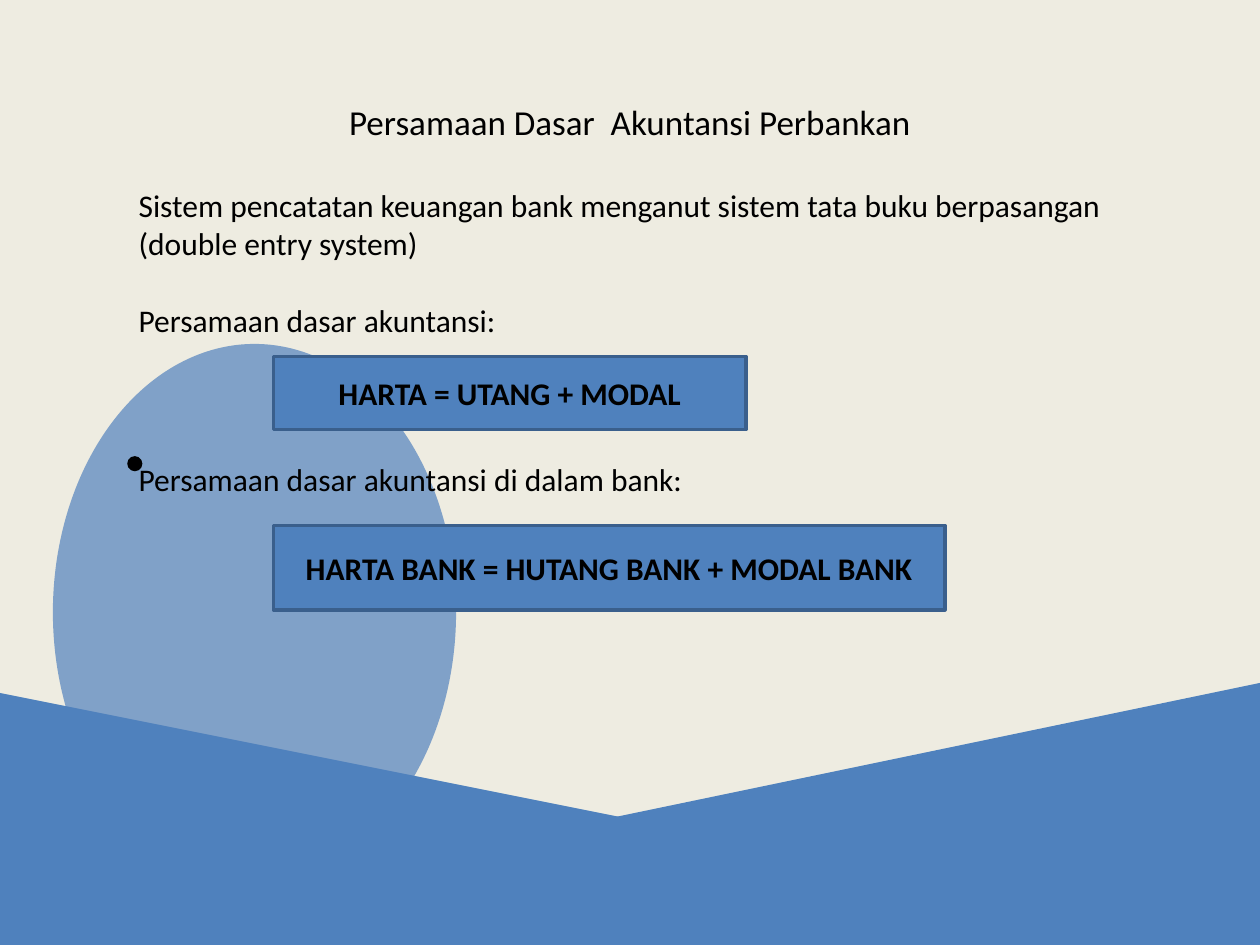
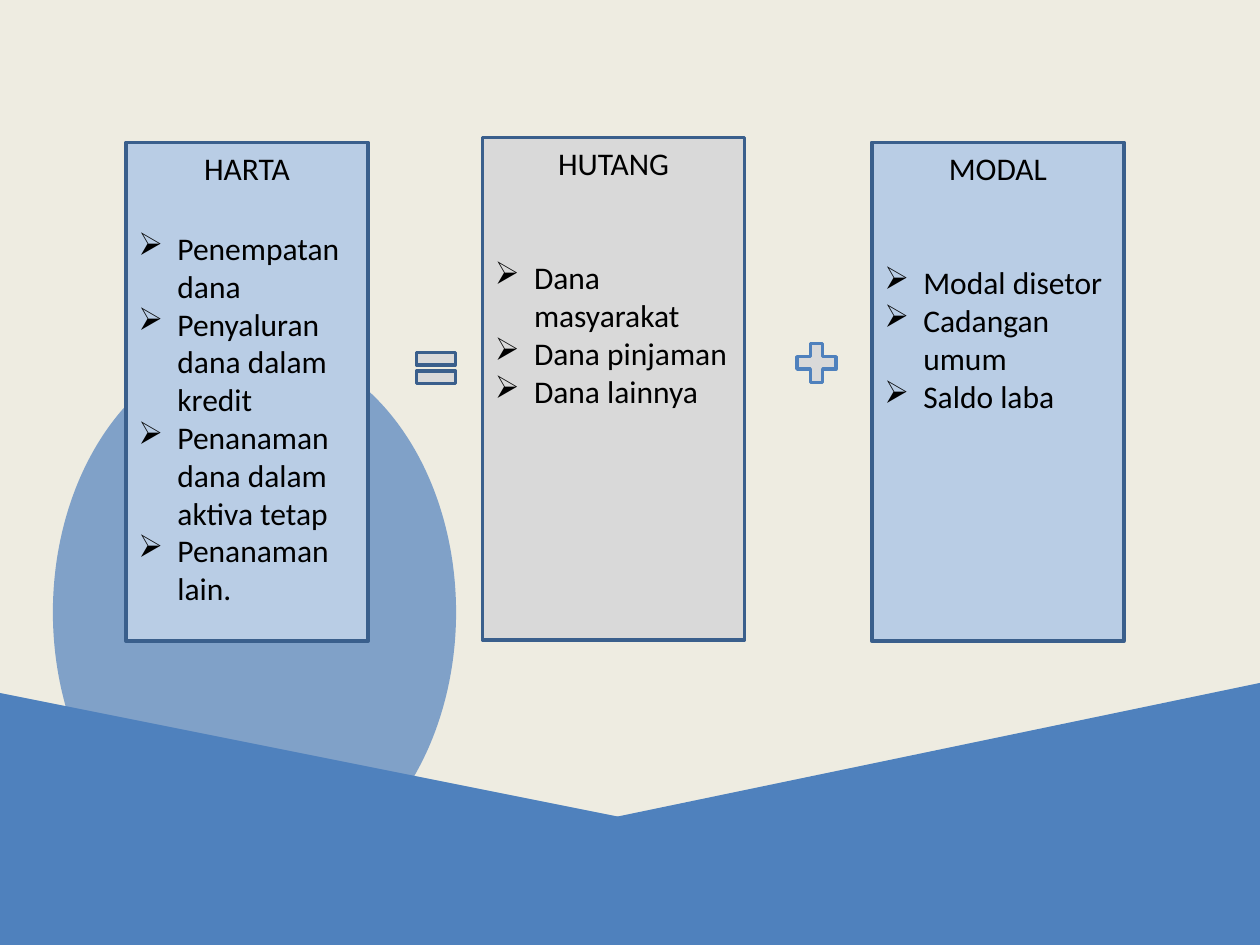
from lxml.etree import SubElement
from pptx import Presentation
from pptx.dml.color import RGBColor
from pptx.enum.shapes import MSO_SHAPE
from pptx.enum.text import MSO_ANCHOR, MSO_AUTO_SIZE, PP_ALIGN
from pptx.oxml.ns import qn
from pptx.util import Inches, Pt

FONT = "Calibri"
BLUE, DARK_BLUE, PALE_BLUE = "4F81BD", "3A5F8C", "B9CDE5"
CIRCLE_BLUE, GREY, CREAM, BLACK = "80A1C8", "D9D9D9", "EEECE1", "000000"
TITLE_BOX = (1, 0.75, 8, 0.44)
BODY_BOX = (1, 1.43, 8, 3.19)


def rgb(color):
    return RGBColor.from_string(color)


def add_text(tf, text, size=18, bold=False, align=PP_ALIGN.LEFT,
             before=0, after=0, bullet=None, hang=0):
    """Write one paragraph, taking the first one while it is still empty."""
    p = tf.paragraphs[0]
    if p.runs:
        p = tf.add_paragraph()
    p.alignment = align
    p.line_spacing = 1.0
    p.space_before, p.space_after = Pt(before), Pt(after)
    pPr = p._p.get_or_add_pPr()
    pPr.set("marL", str(Inches(hang)))
    pPr.set("indent", str(-Inches(hang)))
    if bullet:
        SubElement(pPr, qn("a:buChar")).set("char", bullet)
    else:
        SubElement(pPr, qn("a:buNone"))
    r = p.add_run()
    r.text = text
    r.font.name, r.font.size, r.font.bold = FONT, Pt(size), bold
    r.font.color.rgb = rgb(BLACK)


def add_shape(slide, kind, box, fill, line=None):
    sp = slide.shapes.add_shape(kind, *map(Inches, box))
    sp.shadow.inherit = False
    sp.fill.solid()
    sp.fill.fore_color.rgb = rgb(fill)
    if line:
        sp.line.color.rgb = rgb(line)
        sp.line.width = Pt(2)
    else:
        sp.line.fill.background()
    return sp


def add_backdrop(slide):
    """Draw the circle and the two wedges behind everything else."""
    circle = add_shape(slide, MSO_SHAPE.OVAL, (0.42, 2.73, 3.2, 4.26), CIRCLE_BLUE)
    left = add_shape(slide, MSO_SHAPE.RIGHT_TRIANGLE, (0, 5.5, 10, 2), BLUE)
    right = add_shape(slide, MSO_SHAPE.RIGHT_TRIANGLE, (0, 5.42, 10, 2.08), BLUE)
    right.element.spPr.find(qn("a:xfrm")).set("flipH", "1")
    for i, sp in enumerate((circle, left, right)):
        sp.element.getparent().insert(2 + i, sp.element)


def place(sp, box, anchor=MSO_ANCHOR.TOP):
    """Move a placeholder to a box and return its text frame."""
    sp.left, sp.top, sp.width, sp.height = map(Inches, box)
    tf = sp.text_frame
    tf.word_wrap = True
    tf.auto_size = MSO_AUTO_SIZE.NONE
    tf.vertical_anchor = anchor
    return tf


def add_equation(slide, box, text):
    sp = add_shape(slide, MSO_SHAPE.RECTANGLE, box, BLUE, DARK_BLUE)
    sp.text_frame.vertical_anchor = MSO_ANCHOR.MIDDLE
    add_text(sp.text_frame, text, bold=True, align=PP_ALIGN.CENTER)


def add_column(slide, box, fill, heading, items, gap=44):
    sp = add_shape(slide, MSO_SHAPE.RECTANGLE, box, fill, DARK_BLUE)
    tf = sp.text_frame
    tf.word_wrap = True
    tf.vertical_anchor = MSO_ANCHOR.TOP
    add_text(tf, heading, align=PP_ALIGN.CENTER, after=gap)
    for item in items:
        add_text(tf, item, bullet="➢", hang=0.31)


def build_equation_slide(prs):
    slide = prs.slides.add_slide(prs.slide_layouts[1])
    add_backdrop(slide)
    title = place(slide.shapes.title, TITLE_BOX)
    add_text(title, "Persamaan Dasar  Akuntansi Perbankan", size=20,
             align=PP_ALIGN.CENTER)
    body = place(slide.placeholders[1], BODY_BOX)
    add_text(body, "Sistem pencatatan keuangan bank menganut sistem tata buku "
                   "berpasangan (double entry system)")
    add_text(body, "Persamaan dasar akuntansi:", before=22)
    add_text(body, "Persamaan dasar akuntansi di dalam bank:", before=69.5)
    add_shape(slide, MSO_SHAPE.OVAL, (1.01, 3.62, 0.12, 0.12), BLACK)
    add_equation(slide, (2.17, 2.83, 3.75, 0.58), "HARTA = UTANG + MODAL")
    add_equation(slide, (2.17, 4.17, 5.33, 0.67),
                 "HARTA BANK = HUTANG BANK + MODAL BANK")


def build_components_slide(prs):
    slide = prs.slides.add_slide(prs.slide_layouts[6])
    add_backdrop(slide)
    add_column(slide, (1, 1.13, 1.92, 3.96), PALE_BLUE, "HARTA",
               ["Penempatan dana", "Penyaluran dana dalam kredit",
                "Penanaman dana dalam aktiva tetap", "Penanaman lain."], gap=24.4)
    add_shape(slide, MSO_SHAPE.MATH_EQUAL, (3.25, 2.71, 0.42, 0.42), GREY, DARK_BLUE)
    add_column(slide, (3.83, 1.09, 2.08, 3.99), GREY, "HUTANG",
               ["Dana masyarakat", "Dana pinjaman", "Dana lainnya"])
    add_column(slide, (6.92, 1.13, 2, 3.96), PALE_BLUE, "MODAL",
               ["Modal disetor", "Cadangan umum", "Saldo laba"])
    add_shape(slide, MSO_SHAPE.MATH_PLUS, (6.27, 2.67, 0.42, 0.42), GREY, BLUE)


def main():
    prs = Presentation()
    prs.slide_width, prs.slide_height = Inches(10), Inches(7.5)
    background = prs.slide_master.background.fill
    background.solid()
    background.fore_color.rgb = rgb(CREAM)
    build_equation_slide(prs)
    build_components_slide(prs)
    prs.save("out.pptx")


if __name__ == "__main__":
    main()
